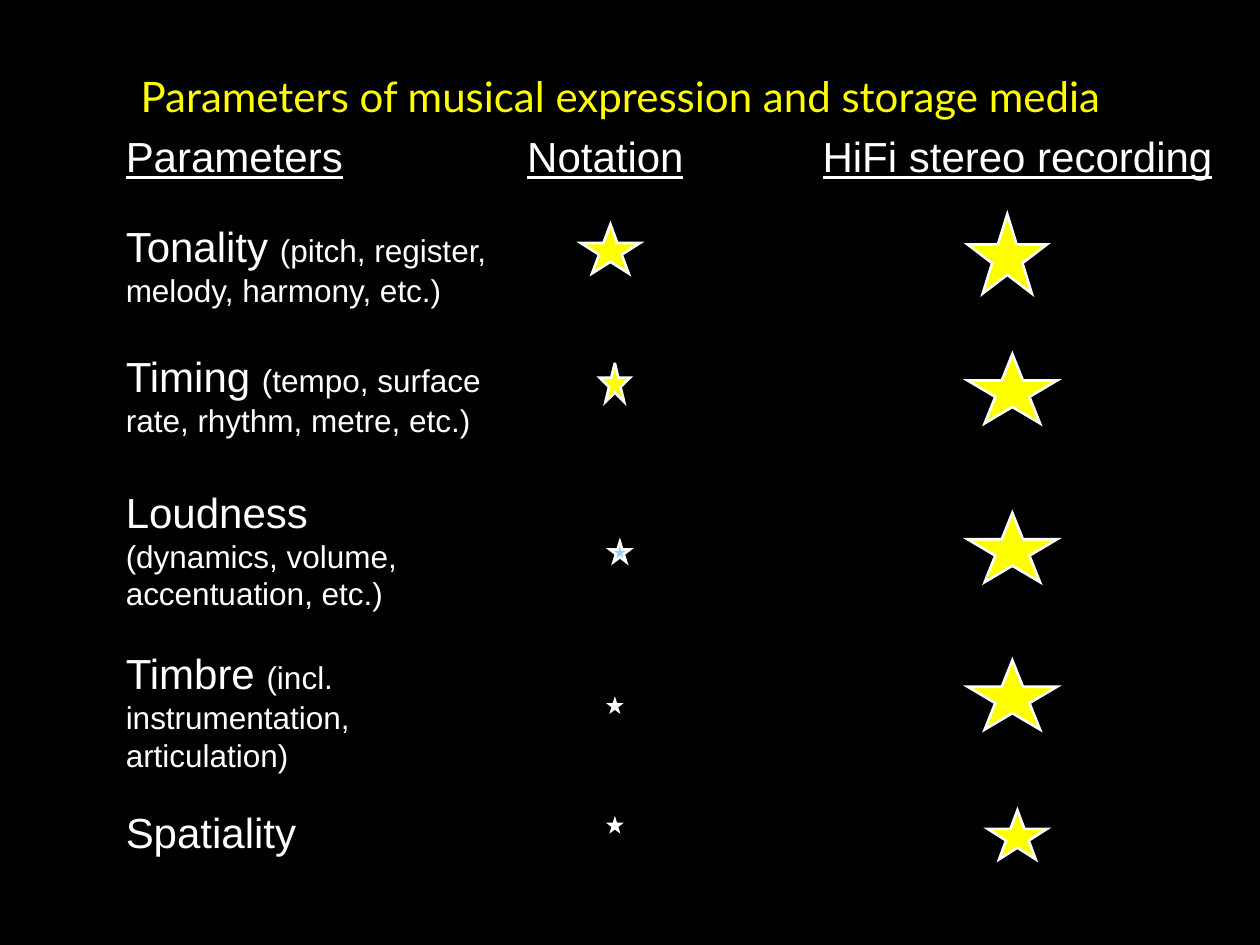
import pptx
import pptx.util
import pptx.dml.color
import pptx.enum.shapes
import pptx.enum.text
import pptx.oxml.ns
from lxml import etree

RGB = pptx.dml.color.RGBColor
BLACK = RGB(0x00, 0x00, 0x00)
WHITE = RGB(0xFF, 0xFF, 0xFF)
YELLOW = RGB(0xFF, 0xFF, 0x00)
PALE_BLUE = RGB(0x99, 0xCC, 0xFF)

ALIGN = pptx.enum.text.PP_ALIGN
ANCHOR = pptx.enum.text.MSO_ANCHOR
inches = pptx.util.Inches

# Grid: left edges of the columns, height of a single text line
PARAMETERS_X, NOTATION_X, RECORDING_X = 0.9, 3.74, 6.1
LINE_HEIGHT = 0.5

# Column headings: wording, left, width, alignment
HEADINGS = [
    ("Parameters", PARAMETERS_X, 2.13, ALIGN.LEFT),
    ("Notation", NOTATION_X, 2.13, ALIGN.CENTER),
    ("HiFi stereo recording", RECORDING_X, 3.62, ALIGN.RIGHT),
]

# Ratings: star box relative to its row and column (dx, dy, width, height)
# Rows: name, examples, text box (top, width, height), notation, recording
ROWS = [
    ("Tonality", "(pitch, register, melody, harmony, etc.)", (1.7, 3.23, 0.81),
     (0.87, 0.08, 0.47, 0.39), (1.58, 0, 0.63, 0.63)),
    ("Timing", "(tempo, surface rate, rhythm, metre, etc.)", (2.73, 3.31, 0.81),
     (1.02, 0.15, 0.24, 0.31), (1.58, 0.08, 0.71, 0.55)),
    ("Loudness", "(dynamics, volume, accentuation, etc.)", (3.81, 2.6, 1.11),
     (1.1, 0.49, 0.16, 0.16), (1.58, 0.26, 0.71, 0.55)),
    ("Timbre", "(incl. instrumentation, articulation)", (5.09, 2.6, 1.1),
     (1.1, 0.47, 0.08, 0.08), (1.58, 0.15, 0.71, 0.55)),
    ("Spatiality", "", (6.35, 2.6, LINE_HEIGHT),
     (1.1, 0.16, 0.08, 0.08), (1.74, 0.08, 0.47, 0.39)),
]
SMALL_STAR = 0.2  # stars narrower than this are pale blue


def add_run(paragraph, wording, size, color=WHITE, font="Arial", underline=None):
    run = paragraph.add_run()
    run.text = wording
    run.font.size = pptx.util.Pt(size)
    run.font.name = font
    run.font.color.rgb = color
    run.font.underline = underline


def add_label(slide, box, align=ALIGN.LEFT):
    """Add a wrapping text box and return its paragraph."""
    frame = slide.shapes.add_textbox(*map(inches, box)).text_frame
    frame.word_wrap = True
    frame.paragraphs[0].alignment = align
    return frame.paragraphs[0]


def add_title(slide, box):
    title = slide.shapes.title
    title.left, title.top, title.width, title.height = map(inches, box)
    frame = title.text_frame
    frame.vertical_anchor = ANCHOR.MIDDLE
    heading = frame.paragraphs[0]
    heading.alignment = ALIGN.CENTER
    add_run(heading, "Parameters of musical expression and storage media",
            24, YELLOW, "Lato")
    # The tall trailing space sets the height of the title line
    add_run(heading, " ", 44, YELLOW, "Times New Roman")


def add_headings(slide, top):
    for wording, left, width, align in HEADINGS:
        heading = add_label(slide, (left, top, width, LINE_HEIGHT), align)
        add_run(heading, wording, 24, underline=True)


def add_star(slide, column_x, row_y, rating):
    dx, dy, width, height = rating
    star = slide.shapes.add_shape(
        pptx.enum.shapes.MSO_SHAPE.STAR_5_POINT,
        *map(inches, (column_x + dx, row_y + dy, width, height)))
    star.shadow.inherit = False
    star.fill.solid()
    star.fill.fore_color.rgb = PALE_BLUE if width < SMALL_STAR else YELLOW
    star.line.color.rgb = WHITE
    star.line.width = pptx.util.Pt(1.5)
    # Sharp corners
    outline = star.line._get_or_add_ln()
    etree.SubElement(outline, pptx.oxml.ns.qn("a:miter"), lim="800000")


def add_row(slide, name, examples, box, notation, recording):
    top, width, height = box
    parameter = add_label(slide, (PARAMETERS_X, top, width, height))
    add_run(parameter, f"{name} " if examples else name, 24)
    if examples:
        add_run(parameter, examples, 18)
    add_star(slide, NOTATION_X, top, notation)
    add_star(slide, RECORDING_X, top, recording)


def main():
    deck = pptx.Presentation()
    deck.slide_width, deck.slide_height = inches(10), inches(7.5)
    slide = deck.slides.add_slide(deck.slide_layouts.get_by_name("Title Only"))
    slide.background.fill.solid()
    slide.background.fill.fore_color.rgb = BLACK

    add_title(slide, (0.75, 0.21, 8.5, 0.87))
    add_headings(slide, 0.99)
    for row in ROWS:
        add_row(slide, *row)

    deck.save("out.pptx")


if __name__ == "__main__":
    main()
